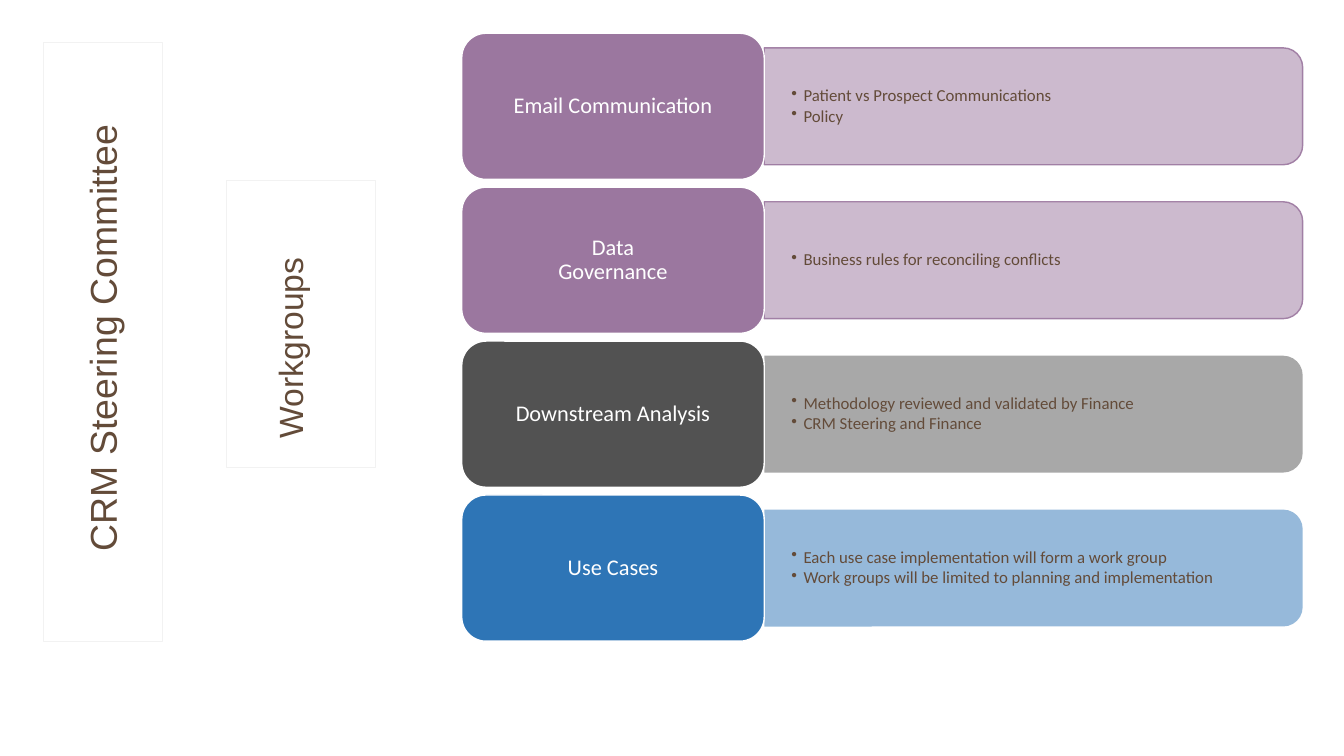
from dataclasses import dataclass

from lxml import etree
from pptx import Presentation
from pptx.dml.color import RGBColor
from pptx.enum.shapes import MSO_SHAPE
from pptx.enum.text import MSO_ANCHOR, PP_ALIGN
from pptx.oxml.ns import qn
from pptx.util import Inches, Pt

TAB, PANEL, RECT = (MSO_SHAPE.ROUNDED_RECTANGLE,
                    MSO_SHAPE.ROUND_2_SAME_RECTANGLE, MSO_SHAPE.RECTANGLE)
TOP, MIDDLE = MSO_ANCHOR.TOP, MSO_ANCHOR.MIDDLE
LEFT, CENTER = PP_ALIGN.LEFT, PP_ALIGN.CENTER


@dataclass(frozen=True)
class Theme:
    purple: str = "9B779F"
    gray: str = "525252"
    blue: str = "2E75B6"
    brown: str = "634B39"
    white: str = "FFFFFF"
    edge: str = "F2F2F2"
    head: str = "Arial"
    body: str = "Calibri"
    title: float = 26.7
    side: float = 24
    tab: float = 16
    item: float = 12


T = Theme()

# Label, color, panel has an outline, bullets
GROUPS = [
    ("Email Communication", T.purple, True,
     ["Patient vs Prospect Communications", "Policy"]),
    ("Data\vGovernance", T.purple, True,
     ["Business rules for reconciling conflicts"]),
    ("Downstream Analysis", T.gray, False,
     ["Methodology reviewed and validated by Finance",
      "CRM Steering and Finance"]),
    ("Use Cases", T.blue, False,
     ["Each use case implementation will form a work group",
      "Work groups will be limited to planning and implementation"]),
]
TITLE, SIDE = "CRM Steering Committee", "Workgroups"

# Rows of the grid, in inches
FIRST, PITCH = 0.33, 1.527
TAB_X, TAB_W, TAB_H = 4.58, 3, 1.45
PANEL_W, PANEL_H = 5.34, 1.16
PANEL_X = TAB_X + TAB_W

# Upright boxes: center x, center y, length, depth
TITLE_CARD, TITLE_BOX = (1.02, 3.39, 5.95, 1.18), (0.99, 2.99, 5.16, 0.59)
SIDE_CARD, SIDE_BOX = (2.98, 3.21, 2.85, 1.48), (2.86, 3.21, 2.47, 0.55)


def around(x, y, w, h):
    """Left, top, width and height of a box centered on x, y."""
    return [Inches(v) for v in (x - w / 2, y - h / 2, w, h)]


def fade(paint, share):
    color = paint._xPr.find(".//" + qn("a:srgbClr"))
    etree.SubElement(color, qn("a:alpha"), val=str(share * 1000))


def add_box(slide, kind, place, color, edge=None, width=1, turn=0):
    box = slide.shapes.add_shape(kind, *place)
    box.shadow.inherit = False
    box.rotation = turn
    box.fill.solid()
    box.fill.fore_color.rgb = RGBColor.from_string(color)
    if edge:
        box.line.color.rgb = RGBColor.from_string(edge)
        box.line.width = Pt(width)
    else:
        box.line.fill.background()
    return box


def write(box, lines, font, size, color, align=LEFT, anchor=MIDDLE,
          inset=(0.1, 0.05), space=0.9, bullet=False):
    frame = box.text_frame
    frame.word_wrap = True
    frame.vertical_anchor = anchor
    frame.margin_left = frame.margin_right = Inches(inset[0])
    frame.margin_top = frame.margin_bottom = Inches(inset[1])
    for i, line in enumerate(lines):
        para = frame.add_paragraph() if i else frame.paragraphs[0]
        para.text = line
        para.alignment = align
        para.line_spacing = space
        if bullet:
            para.space_after = Pt(size * 0.15)
            props = para._p.get_or_add_pPr()
            props.set("marL", str(Inches(0.12)))
            props.set("indent", str(-Inches(0.12)))
            etree.SubElement(props, qn("a:buChar"), char="•")
        para.font.name = font
        para.font.size = Pt(size)
        para.font.color.rgb = RGBColor.from_string(color)


def add_group(slide, row, label, color, lined, items):
    mid = FIRST + row * PITCH + TAB_H / 2
    center = PANEL_X + PANEL_W / 2
    panel = add_box(slide, PANEL, around(center, mid, PANEL_H, PANEL_W),
                    color, color if lined else None, turn=90)
    fade(panel.fill, 50)
    if lined:
        fade(panel.line.fill, 90)
    text = slide.shapes.add_textbox(*around(center, mid, PANEL_W, 1.05))
    write(text, items, T.body, T.item, T.brown, inset=(0.27, 0.14),
          bullet=True)
    tab = add_box(slide, TAB, around(TAB_X + TAB_W / 2, mid, TAB_W, TAB_H),
                  color, T.white)
    write(tab, [label], T.body, T.tab, T.white, CENTER)


def set_upright(slide, box, text, size, card, place):
    """Lay a card and raise the turned text box above it."""
    add_box(slide, RECT, around(*card), T.white, T.edge, 0.5, 270)
    box.left, box.top, box.width, box.height = around(*place)
    box.rotation = 270
    write(box, [text], T.head, size, T.brown, anchor=TOP, space=1.1)
    slide.shapes._spTree.append(box._element)


def main():
    deck = Presentation()
    deck.slide_width, deck.slide_height = Inches(13.33), Inches(7.5)
    slide = deck.slides.add_slide(deck.slide_layouts[5])
    for row, group in enumerate(GROUPS):
        add_group(slide, row, *group)
    set_upright(slide, slide.shapes.title, TITLE, T.title,
                TITLE_CARD, TITLE_BOX)
    side = slide.shapes.add_textbox(*around(*SIDE_BOX))
    set_upright(slide, side, SIDE, T.side, SIDE_CARD, SIDE_BOX)
    deck.save("out.pptx")


if __name__ == "__main__":
    main()
